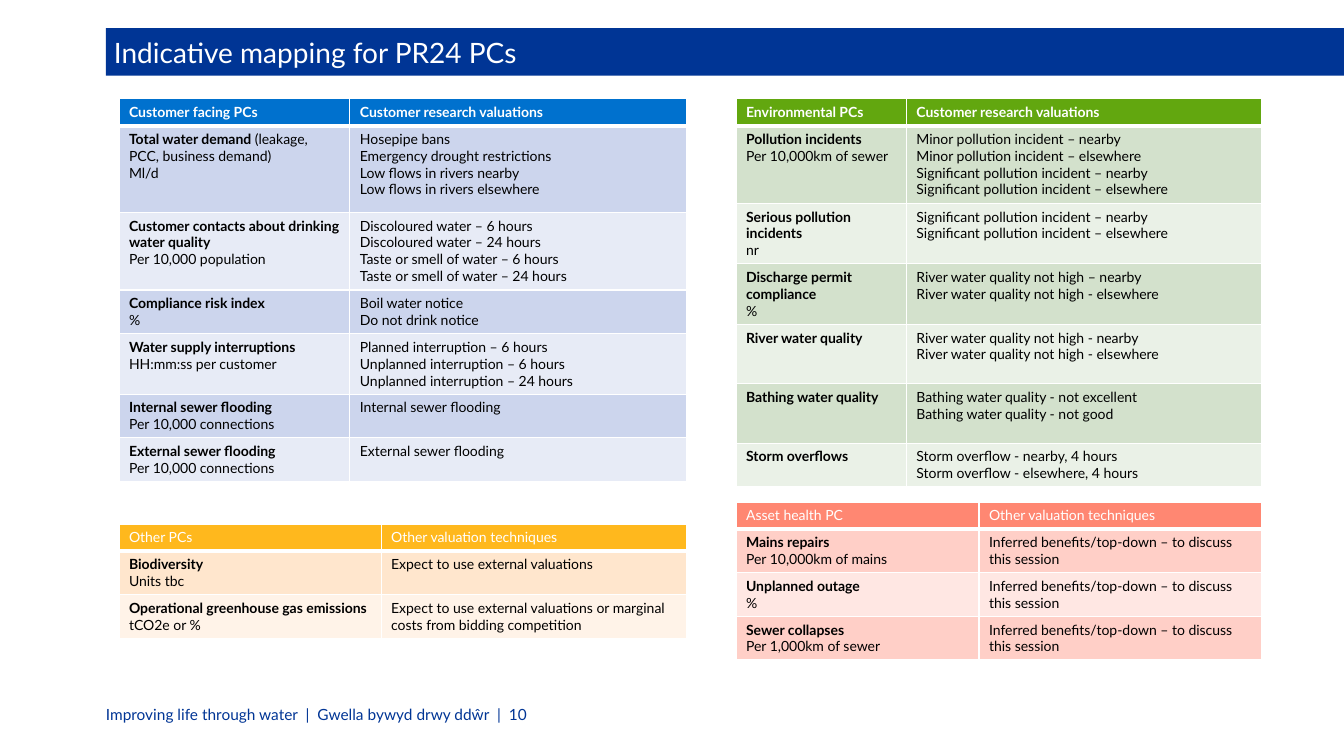
from lxml.etree import SubElement
from pptx import Presentation
from pptx.dml.color import RGBColor
from pptx.enum.text import MSO_ANCHOR, MSO_AUTO_SIZE, PP_ALIGN
from pptx.oxml.ns import qn
from pptx.util import Inches, Pt

# Content
TITLE = "Indicative mapping for PR24 PCs"
FOOTER = "Improving life through water  |  Gwella bywyd drwy ddŵr  |  10"
QUALIFIERS = {"Total water demand": " (leakage, PCC, business demand)"}
INFERRED = ["Inferred benefits/top-down – to discuss this session"]

# Each row: commitment, unit, valuations, row height
CUSTOMER_ROWS = [
    ("Total water demand", "Ml/d",
     ["Hosepipe bans", "Emergency drought restrictions",
      "Low flows in rivers nearby", "Low flows in rivers elsewhere"], 0.86),
    ("Customer contacts about drinking water quality", "Per 10,000 population",
     ["Discoloured water – 6 hours", "Discoloured water – 24 hours",
      "Taste or smell of water – 6 hours", "Taste or smell of water – 24 hours"], 0.77),
    ("Compliance risk index", "%", ["Boil water notice", "Do not drink notice"], 0.43),
    ("Water supply interruptions", "HH:mm:ss per customer",
     ["Planned interruption – 6 hours", "Unplanned interruption – 6 hours",
      "Unplanned interruption – 24 hours"], 0.6),
    ("Internal sewer flooding", "Per 10,000 connections", ["Internal sewer flooding"], 0.43),
    ("External sewer flooding", "Per 10,000 connections", ["External sewer flooding"], 0.43),
]
ENVIRONMENT_ROWS = [
    ("Pollution incidents", "Per 10,000km of sewer",
     ["Minor pollution incident – nearby", "Minor pollution incident – elsewhere",
      "Significant pollution incident – nearby",
      "Significant pollution incident – elsewhere"], 0.77),
    ("Serious pollution incidents", "nr",
     ["Significant pollution incident – nearby",
      "Significant pollution incident – elsewhere"], 0.6),
    ("Discharge permit compliance", "%",
     ["River water quality not high – nearby",
      "River water quality not high - elsewhere"], 0.6),
    ("River water quality", "",
     ["River water quality not high - nearby",
      "River water quality not high - elsewhere"], 0.59),
    ("Bathing water quality", "",
     ["Bathing water quality - not excellent", "Bathing water quality - not good"], 0.59),
    ("Storm overflows", "",
     ["Storm overflow - nearby, 4 hours", "Storm overflow - elsewhere, 4 hours"], 0.43),
]
OTHER_ROWS = [
    ("Biodiversity", "Units tbc", ["Expect to use external valuations"], 0.43),
    ("Operational greenhouse gas emissions", "tCO2e or %",
     ["Expect to use external valuations or marginal costs from bidding competition"], 0.43),
]
ASSET_ROWS = [
    ("Mains repairs", "Per 10,000km of mains", INFERRED, 0.43),
    ("Unplanned outage", "%", INFERRED, 0.43),
    ("Sewer collapses", "Per 1,000km of sewer", INFERRED, 0.43),
]

THEME = {
    "font": "Lato", "title": 20, "footer": 11, "table": 10,
    "navy": "003595", "white": "FFFFFF", "black": "000000",
    # Header, odd row, even row
    "blue": ("0071CE", "CCD5ED", "E7EBF6"),
    "green": ("62A70F", "D3E1CC", "EAF1E7"),
    "amber": ("FFB81D", "FFE6CD", "FFF3E8"),
    "coral": ("FF8772", "FFCFC7", "FFE7E3"),
}
LEFT, RIGHT = 1.18, 7.3
HEADER_H = 0.26
RESEARCH, TECHNIQUES = "Customer research valuations", "Other valuation techniques"

# Each table: left, top, column widths, palette, header texts, bold header, rows
TABLES = [
    (LEFT, 0.98, (2.29, 3.34), "blue", ("Customer facing PCs", RESEARCH), True, CUSTOMER_ROWS),
    (RIGHT, 0.98, (1.69, 3.52), "green", ("Environmental PCs", RESEARCH), True, ENVIRONMENT_ROWS),
    (LEFT, 5.2, (2.6, 3.03), "amber", ("Other PCs", TECHNIQUES), False, OTHER_ROWS),
    (RIGHT, 4.98, (2.41, 2.8), "coral", ("Asset health PC", TECHNIQUES), False, ASSET_ROWS),
]


def add_run(p, text, size, color, bold=False):
    r = p.add_run()
    r.text = text
    r.font.name = THEME["font"]
    r.font.size = Pt(size)
    r.font.bold = bold
    r.font.color.rgb = RGBColor.from_string(color)


def style_cell(cell, fill, top, bottom):
    tc_pr = cell._tc.get_or_add_tcPr()
    for side, width in (("L", 1), ("R", 1), ("T", top), ("B", bottom)):
        ln = SubElement(tc_pr, qn(f"a:ln{side}"), w=str(Pt(width)))
        solid = SubElement(ln, qn("a:solidFill"))
        SubElement(solid, qn("a:srgbClr"), val=THEME["white"])
    cell.fill.solid()
    cell.fill.fore_color.rgb = RGBColor.from_string(fill)


def write_cell(cell, lines, color):
    """Each line is a list of (text, bold) pieces."""
    tf = cell.text_frame
    for i, pieces in enumerate(lines):
        p = tf.add_paragraph() if i else tf.paragraphs[0]
        for text, bold in pieces:
            add_run(p, text, THEME["table"], color, bold)


def add_mapping(slide, left, top, widths, palette, headers, bold, rows):
    heights = [HEADER_H] + [row[3] for row in rows]
    frame = slide.shapes.add_table(len(heights), 2, Inches(left), Inches(top),
                                   Inches(sum(widths)), Inches(sum(heights)))
    table = frame.table
    for col, width in zip(table.columns, widths):
        col.width = Inches(width)
    for row, height in zip(table.rows, heights):
        row.height = Inches(height)

    header_fill, *bands = THEME[palette]
    for cell, text in zip(table.rows[0].cells, headers):
        style_cell(cell, header_fill, 1, 3)
        write_cell(cell, [[(text, bold)]], THEME["white"])

    for i, (name, unit, valuations, _) in enumerate(rows):
        label = [[(name, True)]]
        if name in QUALIFIERS:
            label[0].append((QUALIFIERS[name], False))
        if unit:
            label.append([(unit, False)])
        values = [[(text, False)] for text in valuations]
        for cell, lines in zip(table.rows[i + 1].cells, (label, values)):
            style_cell(cell, bands[i % 2], 1 if i else 3, 1)
            write_cell(cell, lines, THEME["black"])


def place(sp, left, top, width, height):
    sp.left, sp.top, sp.width, sp.height = map(Inches, (left, top, width, height))


def main():
    prs = Presentation()
    prs.slide_width, prs.slide_height = Inches(13.33), Inches(7.5)
    slide = prs.slides.add_slide(prs.slide_layouts[5])

    # Title band
    title = slide.shapes.title
    place(title, 1.05, 0.28, 12.28, 0.47)
    title.fill.solid()
    title.fill.fore_color.rgb = RGBColor.from_string(THEME["navy"])
    tf = title.text_frame
    tf.auto_size = MSO_AUTO_SIZE.NONE
    tf.vertical_anchor = MSO_ANCHOR.MIDDLE
    tf.margin_left, tf.margin_right = Inches(0.08), Inches(0.39)
    tf.margin_top = tf.margin_bottom = Inches(0.04)
    tf.paragraphs[0].alignment = PP_ALIGN.LEFT
    add_run(tf.paragraphs[0], TITLE, THEME["title"], THEME["white"])

    # Mapping tables
    for spec_row in TABLES:
        add_mapping(slide, *spec_row)

    # Footer
    footer = slide.shapes.add_textbox(Inches(1.05), Inches(6.99), Inches(6.82), Inches(0.19))
    tf = footer.text_frame
    tf.word_wrap = True
    tf.vertical_anchor = MSO_ANCHOR.MIDDLE
    tf.margin_left = tf.margin_right = tf.margin_top = tf.margin_bottom = 0
    tf.paragraphs[0].alignment = PP_ALIGN.JUSTIFY
    add_run(tf.paragraphs[0], FOOTER, THEME["footer"], THEME["navy"])

    prs.save("out.pptx")


if __name__ == "__main__":
    main()
